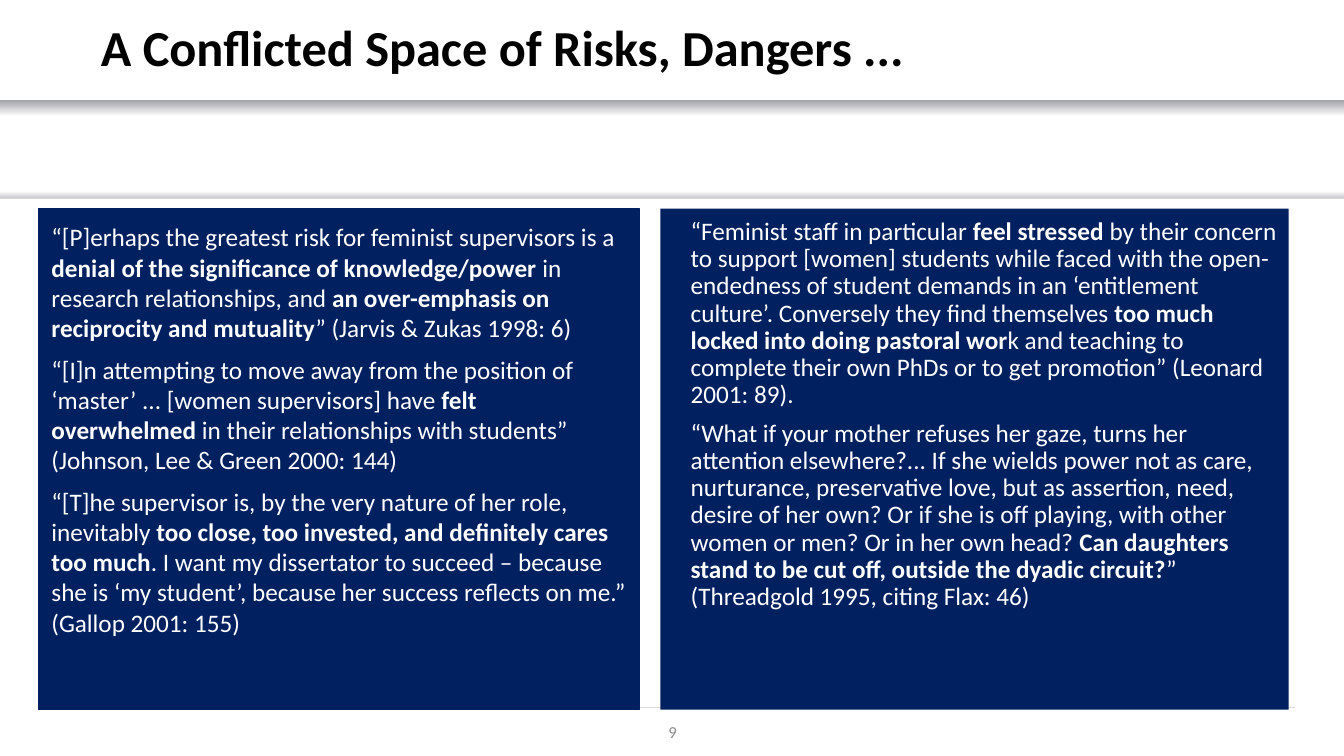
from dataclasses import dataclass
from typing import Optional

from lxml import etree
from pptx import Presentation
from pptx.dml.color import RGBColor
from pptx.enum.shapes import MSO_CONNECTOR, MSO_SHAPE
from pptx.enum.text import MSO_ANCHOR, MSO_AUTO_SIZE, PP_ALIGN
from pptx.oxml.ns import qn
from pptx.util import Inches, Pt

RECT, LINE = MSO_SHAPE.RECTANGLE, MSO_CONNECTOR.STRAIGHT
TOP, MIDDLE = MSO_ANCHOR.TOP, MSO_ANCHOR.MIDDLE
LEFT, CENTER = PP_ALIGN.LEFT, PP_ALIGN.CENTER
NO_FIT = MSO_AUTO_SIZE.NONE
TWO_CONTENT = 3
WIDE, HIGH = Inches(13.33), Inches(7.5)


@dataclass(frozen=True)
class Theme:
    font: str = "Calibri"
    white: str = "FFFFFF"
    black: str = "000000"
    navy: str = "002060"
    shade: str = "80808A"
    rule: str = "D9D9D9"
    grey: str = "8C8C8C"
    title: int = 36
    body: int = 18
    small: int = 12
    gap: int = 8
    hair: float = 0.75


THEME = Theme()


@dataclass(frozen=True)
class Box:
    """A place on the slide, in percent of its width and height."""
    x: float
    y: float
    w: float
    h: float

    def emu(self) -> tuple[int, int, int, int]:
        return (round(WIDE * self.x / 100), round(HIGH * self.y / 100),
                round(WIDE * self.w / 100), round(HIGH * self.h / 100))


@dataclass(frozen=True)
class Band:
    box: Box
    start: str
    end: str


@dataclass(frozen=True)
class Style:
    size: int
    color: str
    align: PP_ALIGN = LEFT
    anchor: MSO_ANCHOR = TOP
    bold: bool = False
    pad: float = 0.13
    space: float = 1.0
    indent: float = 0


@dataclass(frozen=True)
class Panel:
    box: Box
    style: Style
    edge: Optional[str]
    quotes: tuple[str, ...]


BANDS = (
    Band(Box(0, 25.27, 100, 2.13), THEME.white, THEME.shade),
    Band(Box(0, 12.47, 100, 2.93), THEME.shade, THEME.white),
    Band(Box(0, 0, 100, 13.2), THEME.white, THEME.white),
    Band(Box(0, 26.27, 100, 73.73), THEME.white, THEME.white),
)
RULE = Box(3.68, 93.6, 92.65, 0)
HEAD = Box(6.53, 0, 87.02, 13.2)
FOOT = Box(6.53, 93.6, 87.02, 6.4)

# Text between double asterisks is bold.
PANELS = (
    Panel(Box(2.85, 27.6, 44.71, 66.27), Style(THEME.body, THEME.white), THEME.navy, (
        "“[P]erhaps the greatest risk for feminist supervisors is a **denial of the "
        "significance of knowledge/power **in research relationships, and **an "
        "over-emphasis on reciprocity and mutuality**” (Jarvis & Zukas 1998: 6)",
        "“[I]n attempting to move away from the position of ‘master’ ... [women "
        "supervisors] have **felt overwhelmed** in their relationships with "
        "students” (Johnson, Lee & Green 2000: 144)",
        "“[T]he supervisor is, by the very nature of her role, inevitably **too close, "
        "too invested, and definitely cares too much**. I want my dissertator to "
        "succeed – because she is ‘my student’, because her success reflects on "
        "me.” (Gallop 2001: 155)",
    )),
    Panel(Box(49.14, 27.6, 46.74, 66.27),
          Style(THEME.body, THEME.white, pad=0.1, space=0.9, indent=0.2), None, (
        "“Feminist staff in particular **feel stressed **by their concern to support "
        "[women] students while faced with the open-endedness of student demands in an "
        "‘entitlement culture’. Conversely they find themselves **too much locked into "
        "doing pastoral wor**k and teaching to complete their own PhDs or to get "
        "promotion” (Leonard 2001: 89).",
        "“What if your mother refuses her gaze, turns her attention elsewhere?... If "
        "she wields power not as care, nurturance, preservative love, but as assertion, "
        "need, desire of her own? Or if she is off playing, with other women or men? Or "
        "in her own head? **Can daughters stand to be cut off, outside the dyadic "
        "circuit?**” (Threadgold 1995, citing Flax: 46)",
    )),
)


def rgb(code: str) -> RGBColor:
    return RGBColor.from_string(code)


def place(shape, box: Box) -> None:
    shape.left, shape.top, shape.width, shape.height = box.emu()


def write(shape, style: Style, texts: tuple[str, ...]) -> None:
    frame = shape.text_frame
    frame.word_wrap, frame.auto_size = True, NO_FIT
    frame.vertical_anchor = style.anchor
    frame.margin_left = frame.margin_right = Inches(style.pad)
    frame.margin_top = frame.margin_bottom = Inches(style.pad)
    for i, text in enumerate(texts):
        par = frame.add_paragraph() if i else frame.paragraphs[0]
        props = par._p.get_or_add_pPr()
        props.set("marL", str(Inches(style.indent)))
        props.set("indent", "0")
        etree.SubElement(props, qn("a:buNone"))
        par.alignment, par.line_spacing = style.align, style.space
        par.space_before = Pt(THEME.gap if i else 0)
        font = par.font
        font.name, font.size, font.bold = THEME.font, Pt(style.size), style.bold
        font.color.rgb = rgb(style.color)
        for j, part in enumerate(text.split("**")):
            if part:
                run = par.add_run()
                run.text = part
                if j % 2:
                    run.font.bold = True


def draw_band(shapes, band: Band) -> None:
    shape = shapes.add_shape(RECT, *band.box.emu())
    shape.shadow.inherit = False
    shape.line.fill.background()
    if band.start == band.end:
        shape.fill.solid()
        shape.fill.fore_color.rgb = rgb(band.start)
        return
    shape.fill.gradient()
    shape.fill.gradient_angle = 270
    for stop, code in zip(shape.fill.gradient_stops, (band.start, band.end)):
        stop.color.rgb = rgb(code)


def draw_rule(shapes, box: Box) -> None:
    x, y, w, h = box.emu()
    rule = shapes.add_connector(LINE, x, y, x + w, y + h)
    rule.line.color.rgb, rule.line.width = rgb(THEME.rule), Pt(THEME.hair)
    etree.SubElement(rule._element.spPr, qn("a:effectLst"))


def fill_panel(shape, panel: Panel) -> None:
    place(shape, panel.box)
    shape.fill.solid()
    shape.fill.fore_color.rgb = rgb(THEME.navy)
    if panel.edge:
        shape.line.color.rgb, shape.line.width = rgb(panel.edge), Pt(THEME.hair)
    write(shape, panel.style, panel.quotes)


def main() -> None:
    deck = Presentation()
    deck.slide_width, deck.slide_height = WIDE, HIGH
    slide = deck.slides.add_slide(deck.slide_layouts[TWO_CONTENT])
    shapes = slide.shapes
    title, *bodies = slide.placeholders
    for band in BANDS:
        draw_band(shapes, band)
    draw_rule(shapes, RULE)
    for holder in (title, *bodies):
        shapes._spTree.append(holder._element)  # bring in front of the bands
    place(title, HEAD)
    write(title, Style(THEME.title, THEME.black, anchor=MIDDLE, bold=True, space=0.9),
          ("A Conflicted Space of Risks, Dangers ...",))
    for body, panel in zip(bodies, PANELS):
        fill_panel(body, panel)
    number = shapes.add_textbox(*FOOT.emu())
    write(number, Style(THEME.small, THEME.grey, CENTER, MIDDLE), ("9",))
    deck.save("out.pptx")


if __name__ == "__main__":
    main()
